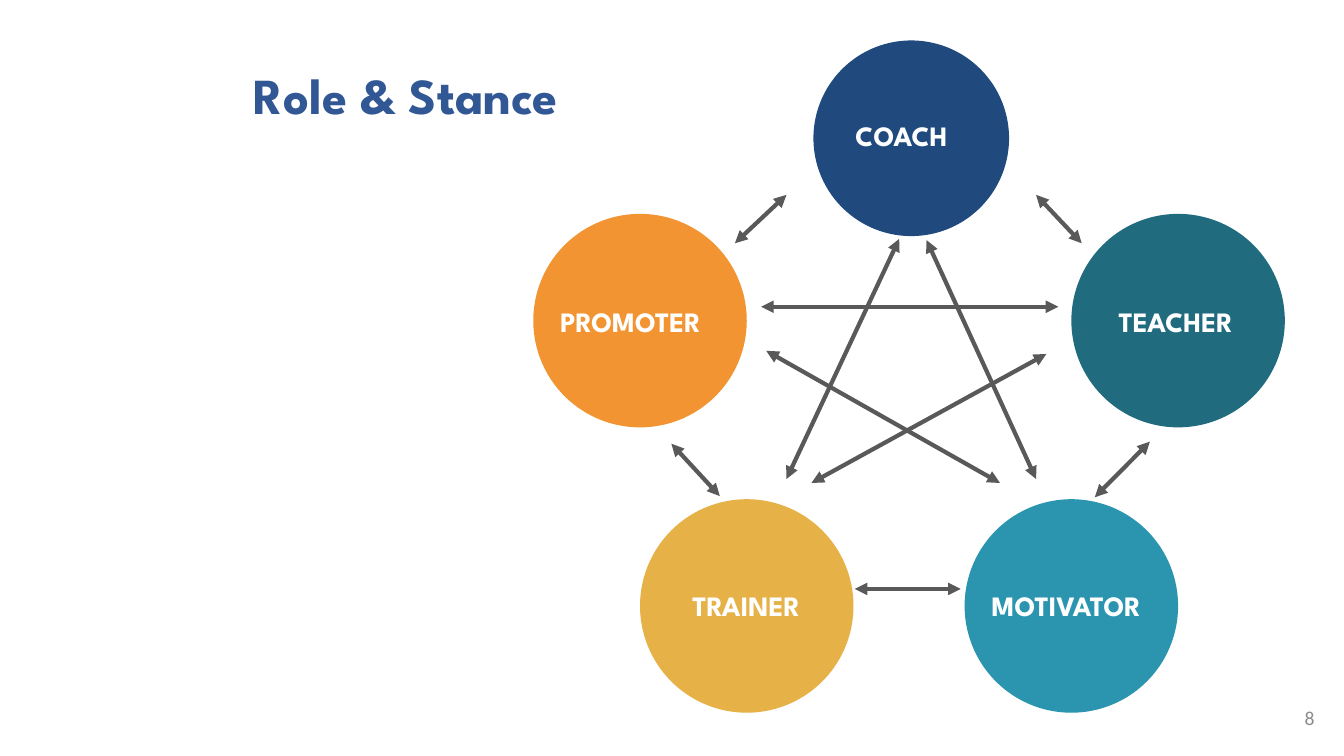
import pptx
import pptx.util
import pptx.dml.color
import pptx.enum.shapes
import pptx.enum.text
import pptx.oxml.ns
import lxml.etree

Cm, Pt = pptx.util.Cm, pptx.util.Pt
Align = pptx.enum.text.PP_ALIGN
Anchor = pptx.enum.text.MSO_ANCHOR
HEADING_FONT = "League Spartan"

# name, circle left, top, diameter, fill, label offset x, y, label width
ROLES = [
    ("TEACHER", 13.56, 4.37, 5.38, "206B7E", 0.94, 2.16, 3.53),
    ("PROMOTER", 0, 4.37, 5.38, "F29432", 0.43, 2.16, 4.24),
    ("TRAINER", 2.69, 11.56, 5.38, "E6B146", 1.07, 2.13, 3.25),
    ("MOTIVATOR", 10.87, 11.56, 5.38, "2B95B0", 0.43, 2.13, 4.57),
    ("COACH", 7.06, 0, 4.93, "20497E", 0.81, 1.83, 3.23),
]

# x and y of both ends, within the diagram
ARROWS = [
    # between neighbours
    (13.82, 5.11, 12.67, 3.89),
    (5.08, 5.11, 6.38, 3.89),
    (4.7, 11.48, 3.48, 10.16),
    (14.15, 11.51, 15.54, 10.11),
    (10.77, 13.82, 8.1, 13.82),
    # across the star
    (6.38, 11.05, 9.22, 5),
    (12.67, 11.05, 9.91, 5.03),
    (13.23, 6.71, 5.74, 6.71),
    (11.76, 11.15, 5.87, 7.82),
    (7.01, 11.15, 12.93, 7.9),
]


def rgb(value):
    return pptx.dml.color.RGBColor.from_string(value)


def add_text(s, box, text, size, color, font=HEADING_FONT, bold=True,
             align=Align.LEFT, anchor=Anchor.MIDDLE, wrap=True):
    tb = s.shapes.add_textbox(*map(Cm, box))
    tf = tb.text_frame
    tf.word_wrap = wrap
    tf.vertical_anchor = anchor
    if not wrap:
        tf.auto_size = pptx.enum.text.MSO_AUTO_SIZE.SHAPE_TO_FIT_TEXT
    p = tf.paragraphs[0]
    p.text = text
    p.alignment = align
    p.font.name = font
    p.font.size = Pt(size)
    p.font.bold = bold
    p.font.color.rgb = rgb(color)
    return p


def add_circle(s, left, top, diameter, fill):
    sp = s.shapes.add_shape(pptx.enum.shapes.MSO_SHAPE.OVAL,
                            Cm(left), Cm(top), Cm(diameter), Cm(diameter))
    sp.shadow.inherit = False
    sp.fill.solid()
    sp.fill.fore_color.rgb = rgb(fill)
    sp.line.fill.background()


def add_double_arrow(s, x1, y1, x2, y2):
    line = s.shapes.add_connector(pptx.enum.shapes.MSO_CONNECTOR.STRAIGHT,
                                  Cm(x1), Cm(y1), Cm(x2), Cm(y2))
    line.line.color.rgb = rgb("595959")
    line.line.width = Pt(3)
    qn = pptx.oxml.ns.qn
    ln = line.line._get_or_add_ln()
    for end in ("a:headEnd", "a:tailEnd"):
        lxml.etree.SubElement(ln, qn(end), type="triangle")
    lxml.etree.SubElement(line._element.spPr, qn("a:effectLst"))


def add_title(s, box):
    p = add_text(s, box, "Role & Stance", 36, "315795")
    p.line_spacing = 0.9


def add_role_diagram(s, left, top):
    for name, x, y, diameter, fill, dx, dy, width in ROLES:
        add_circle(s, left + x, top + y, diameter, fill)
        add_text(s, (left + x + dx, top + y + dy, width, 1.12), name, 20,
                 "FFFFFF", anchor=Anchor.TOP, wrap=False)
    for x1, y1, x2, y2 in ARROWS:
        add_double_arrow(s, left + x1, top + y1, left + x2, top + y2)


def add_page_number(s, box):
    add_text(s, box, "8", 14, "8C8C8C", font="Calibri", bold=False,
             align=Align.RIGHT)


def main():
    prs = pptx.Presentation()
    prs.slide_width, prs.slide_height = Cm(33.87), Cm(19.05)
    s = prs.slides.add_slide(prs.slide_layouts[6])
    add_title(s, (6.15, 0.64, 25.37, 3.68))
    add_role_diagram(s, 13.44, 1.02)
    add_page_number(s, (25.76, 17.58, 7.62, 1.02))
    prs.save("out.pptx")


if __name__ == "__main__":
    main()
